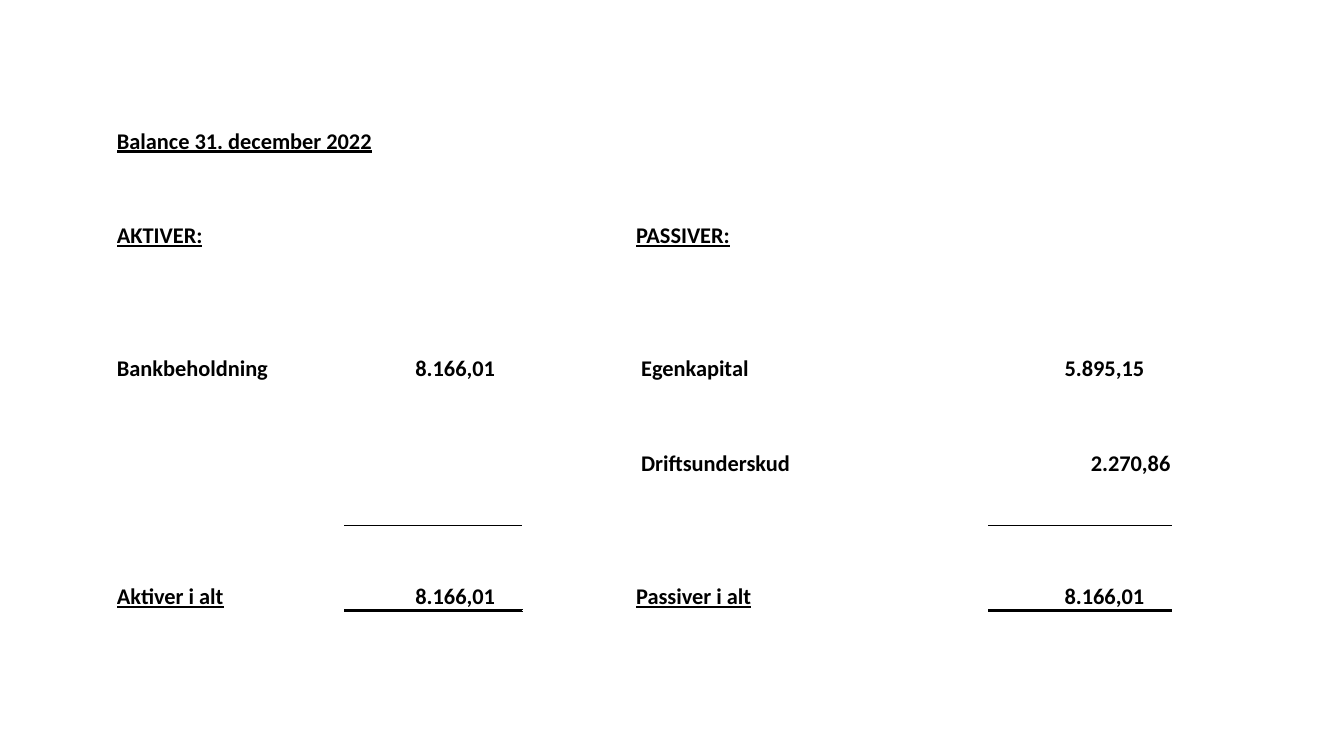
from dataclasses import dataclass

import lxml.etree
import pptx
import pptx.dml.color
import pptx.enum.text
import pptx.oxml.ns
import pptx.table
import pptx.util

Inches = pptx.util.Inches
Pt = pptx.util.Pt
ALIGN = pptx.enum.text.PP_ALIGN
BLACK = pptx.dml.color.RGBColor(0x00, 0x00, 0x00)
FONT = "Calibri"

COLUMN_WIDTHS = (2.27, 1.76, 1.12, 2.39, 1.12, 1.81)
ROW_HEIGHT = 0.47
TALL_ROW_HEIGHT = 0.85
TALL_ROWS = (4, 8)
ROW_COUNT = 9
EDGE = 0.01
LABEL_INDENT = 0.06
AMOUNT_INDENT = 0.27
THIN = 0.5
THICK = 2


@dataclass(frozen=True)
class Entry:
    row: int
    column: int
    text: str
    underline: bool = False
    align: ALIGN = ALIGN.LEFT
    left: float = EDGE
    right: float = EDGE


@dataclass(frozen=True)
class Rule:
    row: int
    column: int
    side: str
    width: float


def heading(row: int, column: int, text: str) -> Entry:
    return Entry(row, column, text, underline=True)


def amount(row: int, column: int, text: str, right: float = AMOUNT_INDENT) -> Entry:
    return Entry(row, column, text, align=ALIGN.RIGHT, right=right)


ENTRIES = (
    heading(0, 0, "Balance 31. december 2022"),
    heading(2, 0, "AKTIVER:"),
    heading(2, 3, "PASSIVER:"),
    Entry(4, 0, "Bankbeholdning"),
    amount(4, 1, "8.166,01"),
    Entry(4, 3, "Egenkapital", left=LABEL_INDENT),
    amount(4, 5, "5.895,15"),
    Entry(6, 3, "Driftsunderskud", left=LABEL_INDENT),
    amount(6, 5, "2.270,86", right=EDGE),
    heading(8, 0, "Aktiver i alt"),
    amount(8, 1, "8.166,01"),
    heading(8, 3, "Passiver i alt"),
    amount(8, 5, "8.166,01"),
)

RULES = tuple(
    Rule(row, column, side, width)
    for column in (1, 5)
    for row, side, width in ((7, "lnB", THIN), (8, "lnB", THICK), (8, "lnT", THIN))
)


def write_entry(table: pptx.table.Table, entry: Entry) -> None:
    cell = table.cell(entry.row, entry.column)
    cell.vertical_anchor = pptx.enum.text.MSO_ANCHOR.BOTTOM
    cell.margin_left = Inches(entry.left)
    cell.margin_right = Inches(entry.right)
    cell.margin_top = Inches(EDGE)
    cell.margin_bottom = 0
    para = cell.text_frame.paragraphs[0]
    para.alignment = entry.align
    span = para.add_run()
    span.text = entry.text
    span.font.name = FONT
    span.font.size = Pt(16)
    span.font.bold = True
    span.font.underline = entry.underline
    span.font.color.rgb = BLACK


def draw_rule(table: pptx.table.Table, rule: Rule) -> None:
    """Add a cell border; borders come before the fill in the cell properties."""
    qn = pptx.oxml.ns.qn
    properties = table.cell(rule.row, rule.column)._tc.get_or_add_tcPr()
    line = lxml.etree.Element(qn(f"a:{rule.side}"), w=str(Pt(rule.width)))
    fill = lxml.etree.SubElement(line, qn("a:solidFill"))
    lxml.etree.SubElement(fill, qn("a:srgbClr"), val=str(BLACK))
    properties.insert(0, line)


def add_balance_table(page: pptx.slide.Slide) -> None:
    heights = [TALL_ROW_HEIGHT if row in TALL_ROWS else ROW_HEIGHT for row in range(ROW_COUNT)]
    frame = page.shapes.add_table(
        ROW_COUNT, len(COLUMN_WIDTHS), Inches(1.15), Inches(1.07),
        Inches(sum(COLUMN_WIDTHS)), Inches(sum(heights)),
    )
    table = frame.table
    table.first_row = False
    table.horz_banding = False
    for column, width in zip(table.columns, COLUMN_WIDTHS):
        column.width = Inches(width)
    for row, height in zip(table.rows, heights):
        row.height = Inches(height)
    for cell in table.iter_cells():
        cell.fill.background()
    table.cell(0, 0).merge(table.cell(0, 1))
    for entry in ENTRIES:
        write_entry(table, entry)
    for rule in RULES:
        draw_rule(table, rule)


def main() -> None:
    deck = pptx.Presentation()
    deck.slide_width = Inches(13.33)
    deck.slide_height = Inches(7.5)
    page = deck.slides.add_slide(deck.slide_layouts.get_by_name("Blank"))
    add_balance_table(page)
    deck.save("out.pptx")


if __name__ == "__main__":
    main()
